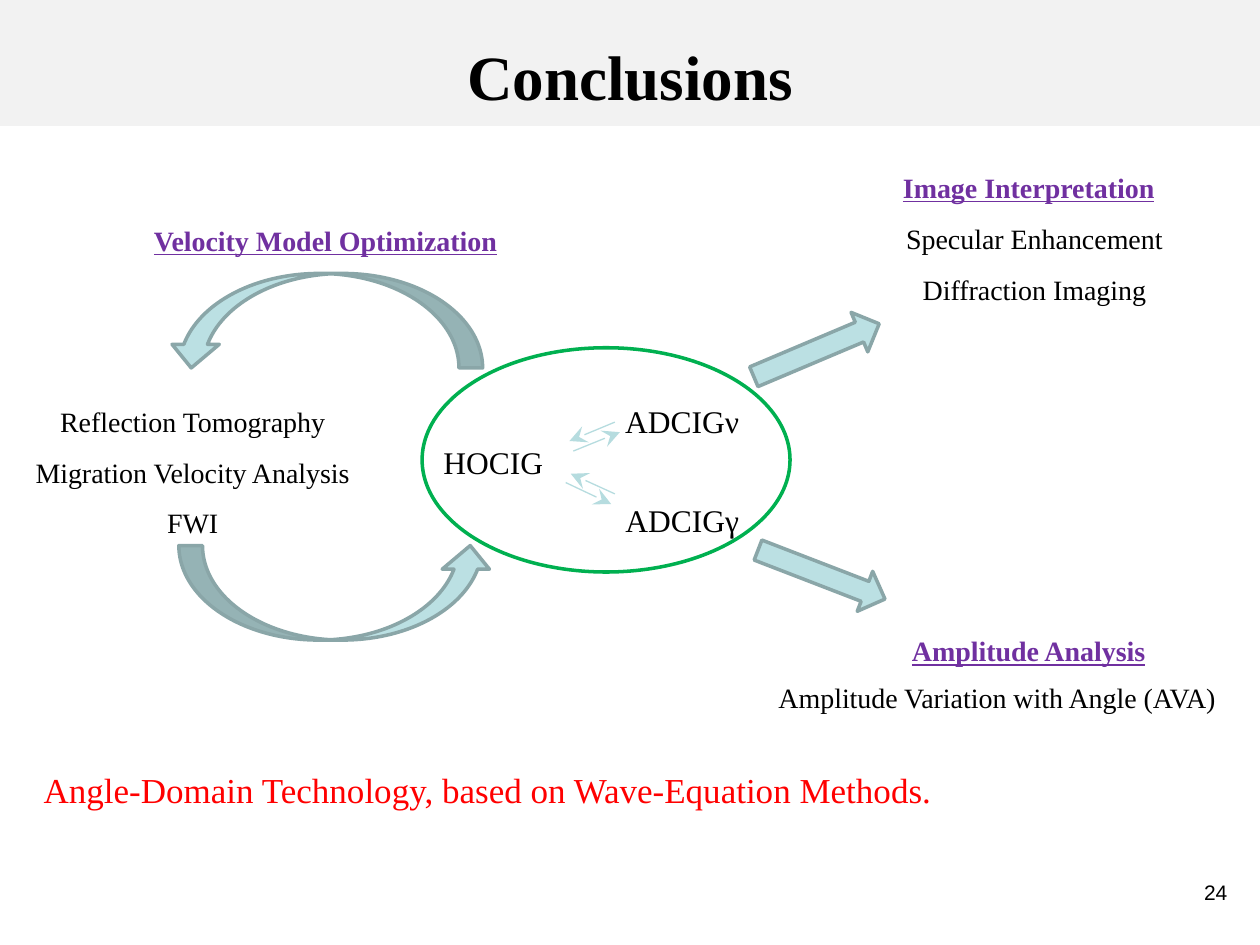
"""Build the conclusions slide linking angle-domain gathers to their uses."""
from dataclasses import dataclass
from typing import Optional

from lxml import etree
from pptx import Presentation
from pptx.dml import color
from pptx.enum import shapes, text
from pptx.oxml import ns
from pptx.util import Inches, Pt

SERIF = "Times New Roman"
BLACK, PURPLE, RED = "000000", "7030A0", "FF0000"
PALE, TEAL, EDGE, GREEN, GREY = "BBE0E3", "B6DCDF", "8AA6A8", "00B050", "F2F2F2"
KIND = shapes.MSO_SHAPE
ALIGN = text.PP_ALIGN


@dataclass
class Label:
    lines: str
    left: float
    top: float
    width: float
    height: float = 0.46
    size: int = 16
    color: str = BLACK
    heading: bool = False
    font: str = SERIF
    align: ALIGN = ALIGN.CENTER
    spacing: float = 1.5


@dataclass
class Block:
    kind: KIND
    left: float
    top: float
    width: float
    height: float
    fill: Optional[str] = PALE
    line: Optional[str] = EDGE
    rotation: float = 0


@dataclass
class Link:
    x1: float
    y1: float
    x2: float
    y2: float
    end: str


BAND = Block(KIND.RECTANGLE, 0, -0.03, 10, 1.03, GREY, None)
BLOCKS = [
    Block(KIND.CURVED_UP_ARROW, 1.42, 4.33, 2.5, 0.75),
    Block(KIND.CURVED_UP_ARROW, 1.33, 2.17, 2.5, 0.75, rotation=180),
    Block(KIND.RIGHT_ARROW, 5.98, 4.39, 1.08, 0.34, rotation=21.1),
    Block(KIND.RIGHT_ARROW, 5.94, 2.61, 1.08, 0.34, rotation=337.1),
    Block(KIND.OVAL, 3.35, 2.76, 2.92, 1.78, None, GREEN),
]
LINKS = [
    Link(4.55, 3.58, 4.92, 3.43, "tailEnd"),
    Link(4.52, 3.5, 4.88, 3.35, "headEnd"),
    Link(4.49, 3.83, 4.85, 4, "tailEnd"),
    Link(4.53, 3.76, 4.88, 3.92, "headEnd"),
]
LABELS = [
    Label("Specular Enhancement\nDiffraction Imaging", 7, 1.58, 2.42, 0.86),
    Label("Amplitude Variation with Angle (AVA)", 5.83, 5.22, 4.17),
    Label("Reflection Tomography\nMigration Velocity Analysis\nFWI", 0.1, 3.03, 2.86, 1.31),
    Label("HOCIG", 3.33, 3.32, 1.17, 0.56, 18),
    Label("ADCIGν", 4.83, 2.99, 1.17, 0.56, 18),
    Label("ADCIGγ", 4.79, 3.78, 1.25, 0.56, 18),
    Label("Velocity Model Optimization", 0.5, 1.59, 4.17, color=PURPLE, heading=True),
    Label("Image Interpretation", 6.08, 1.17, 4.17, color=PURPLE, heading=True),
    Label("Amplitude Analysis", 6.08, 4.85, 4.17, color=PURPLE, heading=True),
    Label("Angle-Domain Technology, based on Wave-Equation Methods.",
          0.08, 5.88, 7.58, 0.55, 20, RED),
    Label("24", 7.51, 6.93, 2.33, 0.52, 12, font="Arial", align=ALIGN.RIGHT, spacing=1),
]


def rgb(value: str) -> color.RGBColor:
    """Turn a hex string into a colour."""
    return color.RGBColor.from_string(value)


def format_runs(p, name: str, size: int, value: str, bold: bool, underline: bool = False) -> None:
    """Format every run of a paragraph."""
    for r in p.runs:
        r.font.name, r.font.size = name, Pt(size)
        r.font.bold, r.font.underline = bold, underline
        r.font.color.rgb = rgb(value)


def add_label(s, label: Label) -> None:
    """Add a text box."""
    sp = s.shapes.add_textbox(*map(Inches, (label.left, label.top, label.width, label.height)))
    tf = sp.text_frame
    tf.word_wrap = True
    tf.text = label.lines
    for p in tf.paragraphs:
        p.alignment = label.align
        p.line_spacing = label.spacing
        format_runs(p, label.font, label.size, label.color, label.heading, label.heading)


def add_block(s, block: Block) -> None:
    """Add a preset shape."""
    sp = s.shapes.add_shape(
        block.kind, *map(Inches, (block.left, block.top, block.width, block.height)))
    sp.shadow.inherit = False
    sp.rotation = block.rotation
    if block.fill:
        sp.fill.solid()
        sp.fill.fore_color.rgb = rgb(block.fill)
    else:
        sp.fill.background()
    if block.line:
        sp.line.color.rgb = rgb(block.line)
        sp.line.width = Pt(2)
    else:
        sp.line.fill.background()


def add_link(s, link: Link) -> None:
    """Add a thin line with a stealth arrowhead at one end."""
    cxn = s.shapes.add_connector(
        shapes.MSO_CONNECTOR.STRAIGHT, *map(Inches, (link.x1, link.y1, link.x2, link.y2)))
    cxn.line.color.rgb = rgb(TEAL)
    cxn.line.width = Pt(0.75)
    etree.SubElement(cxn.line._get_or_add_ln(), ns.qn(f"a:{link.end}"),
                     type="stealth", w="lg", len="lg")
    etree.SubElement(cxn._element.spPr, ns.qn("a:effectLst"))


def add_title(s, title: str) -> None:
    """Fill the title placeholder and bring it in front of the band."""
    sp = s.shapes.title
    sp.left, sp.top, sp.width, sp.height = map(Inches, (0.5, -0.03, 9, 1.25))
    tf = sp.text_frame
    tf.text = title
    tf.vertical_anchor = text.MSO_ANCHOR.MIDDLE
    p = tf.paragraphs[0]
    p.alignment = ALIGN.CENTER
    format_runs(p, SERIF, 36, BLACK, True)
    sp.element.getparent().append(sp.element)


def main() -> None:
    """Build and save the slide."""
    prs = Presentation()
    prs.slide_width, prs.slide_height = Inches(10), Inches(7.5)
    s = prs.slides.add_slide(prs.slide_layouts[5])
    add_block(s, BAND)
    add_title(s, "Conclusions")
    for link in LINKS:
        add_link(s, link)
    for block in BLOCKS:
        add_block(s, block)
    for label in LABELS:
        add_label(s, label)
    prs.save("out.pptx")


if __name__ == "__main__":
    main()
